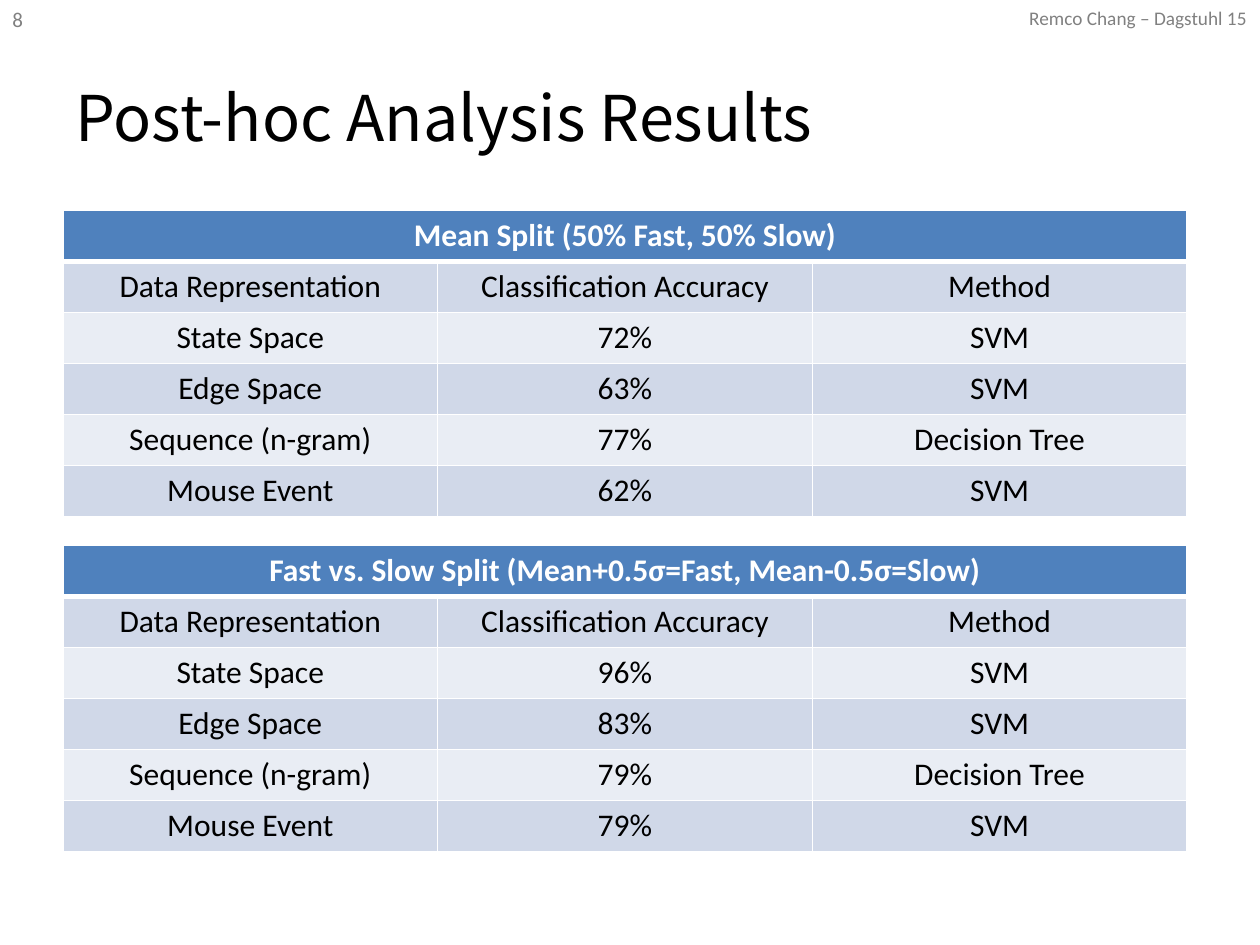
from dataclasses import dataclass

from lxml.etree import SubElement
from pptx import Presentation
from pptx.dml.color import RGBColor
from pptx.enum.text import MSO_ANCHOR, PP_ALIGN
from pptx.oxml.ns import qn
from pptx.util import Inches, Pt

HEADER, BAND_DARK, BAND_LIGHT = "4F81BD", "D0D8E8", "E9EDF4"
WHITE, BLACK, GRAY = "FFFFFF", "000000", "808080"
COLUMNS = ("Data Representation", "Classification Accuracy", "Method")
REPRESENTATIONS = ("State Space", "Edge Space", "Sequence (n-gram)", "Mouse Event")
METHODS = ("SVM", "SVM", "Decision Tree", "SVM")


@dataclass
class Label:
    text: str
    left: float
    width: float
    height: float
    size: int


@dataclass
class ResultTable:
    title: str
    top: float
    accuracies: tuple[str, ...]


LABELS = [
    Label("8", 0, 0.4, 0.3, 12),
    Label("Remco Chang – Dagstuhl 15", 8.07, 1.93, 0.29, 11),
]
TABLES = [
    ResultTable("Mean Split (50% Fast, 50% Slow)", 1.67, ("72%", "63%", "77%", "62%")),
    ResultTable("Fast vs. Slow Split (Mean+0.5σ=Fast, Mean-0.5σ=Slow)", 4.33,
                ("96%", "83%", "79%", "79%")),
]


def style_font(font, size: int, color: str, name: str = "Calibri", bold: bool = False) -> None:
    font.name = name
    font.size = Pt(size)
    font.bold = bold
    font.color.rgb = RGBColor.from_string(color)


def add_label(s, label: Label) -> None:
    box = s.shapes.add_textbox(Inches(label.left), 0, Inches(label.width), Inches(label.height))
    tf = box.text_frame
    tf.word_wrap = False
    tf.text = label.text
    style_font(tf.paragraphs[0].runs[0].font, label.size, GRAY)


def add_borders(cell, top: int, bottom: int) -> None:
    """Draw white cell borders, 1 pt at the sides; call before setting the fill."""
    tc_pr = cell._tc.get_or_add_tcPr()
    for tag, width in (("a:lnL", 1), ("a:lnR", 1), ("a:lnT", top), ("a:lnB", bottom)):
        ln = SubElement(tc_pr, qn(tag), w=str(Pt(width)))
        SubElement(SubElement(ln, qn("a:solidFill")), qn("a:srgbClr"), val=WHITE)


def add_result_table(s, result: ResultTable) -> None:
    rows = [(result.title, "", ""), COLUMNS,
            *zip(REPRESENTATIONS, result.accuracies, METHODS)]
    frame = s.shapes.add_table(len(rows), len(COLUMNS), Inches(0.5), Inches(result.top),
                               Inches(8.92), Inches(2.43))
    table = frame.table
    table.cell(0, 0).merge(table.cell(0, len(COLUMNS) - 1))
    for i, row in enumerate(rows):
        is_header = i == 0
        fill = HEADER if is_header else BAND_DARK if i % 2 else BAND_LIGHT
        for j, text in enumerate(row):
            cell = table.cell(i, j)
            add_borders(cell, top=3 if i == 1 else 1, bottom=3 if is_header else 1)
            cell.fill.solid()
            cell.fill.fore_color.rgb = RGBColor.from_string(fill)
            cell.text_frame.text = text
            p = cell.text_frame.paragraphs[0]
            p.alignment = PP_ALIGN.CENTER
            for r in p.runs:
                style_font(r.font, 18, WHITE if is_header else BLACK, bold=is_header)


def add_title(s, text: str) -> None:
    title = s.shapes.title
    title.left, title.top = Inches(0.5), Inches(0.3)
    title.width, title.height = Inches(9), Inches(1.25)
    tf = title.text_frame
    tf.vertical_anchor = MSO_ANCHOR.MIDDLE
    tf.text = text
    p = tf.paragraphs[0]
    p.alignment = PP_ALIGN.LEFT
    style_font(p.runs[0].font, 36, BLACK, "Noto Sans CJK JP")


def main() -> None:
    prs = Presentation()
    prs.slide_width, prs.slide_height = Inches(10), Inches(7.5)
    s = prs.slides.add_slide(prs.slide_layouts[5])
    for label in LABELS:
        add_label(s, label)
    add_title(s, "Post-hoc Analysis Results")
    for result in TABLES:
        add_result_table(s, result)
    prs.save("out.pptx")


if __name__ == "__main__":
    main()
